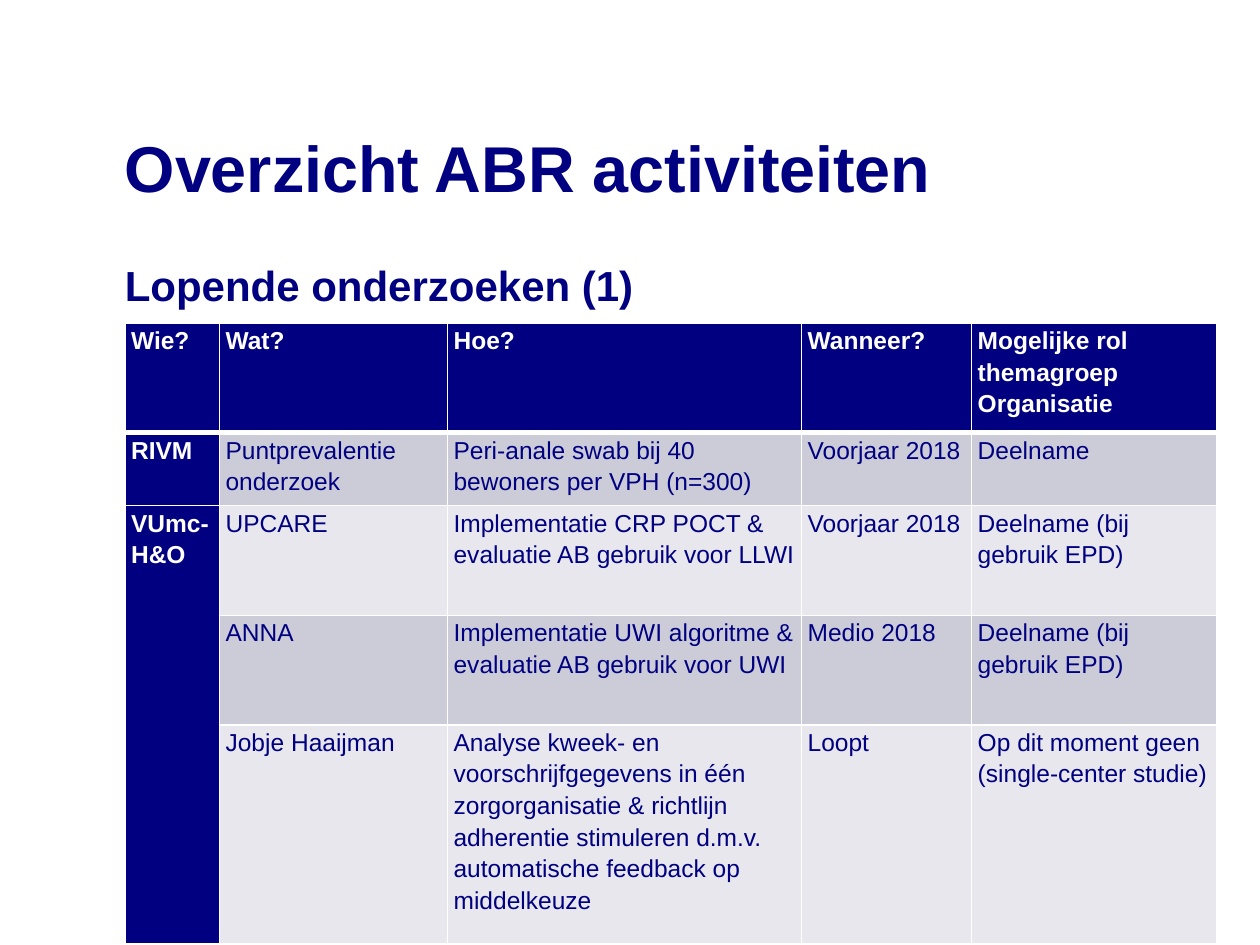
from dataclasses import dataclass

from lxml import etree
from pptx import Presentation
from pptx import util as u
from pptx.dml.color import RGBColor
from pptx.enum import text
from pptx.oxml import ns


@dataclass(frozen=True)
class Theme:
    """Colours, font and type sizes of the slide."""
    navy: str = "000080"
    white: str = "FFFFFF"
    bands: tuple = ("CCCCD8", "E7E7ED")
    font: str = "Arial"
    title: int = 37
    subtitle: int = 24
    cell: int = 14


T = Theme()
W, H = u.Inches(10), u.Inches(7.5)
COLS = (0.75, 1.81, 2.81, 1.35, 1.95)
ROWS = (0.87, 0.58, 0.87, 0.87, 1.74)
DATA = (
    ("Wie?", "Wat?", "Hoe?", "Wanneer?", "Mogelijke rol themagroep Organisatie"),
    ("RIVM", "Puntprevalentie onderzoek",
     "Peri-anale swab bij 40 bewoners per VPH (n=300)", "Voorjaar 2018", "Deelname"),
    ("VUmc-H&O", "UPCARE", "Implementatie CRP POCT & evaluatie AB gebruik voor LLWI",
     "Voorjaar 2018", "Deelname (bij gebruik EPD)"),
    ("", "ANNA", "Implementatie UWI algoritme & evaluatie AB gebruik voor UWI",
     "Medio 2018", "Deelname (bij gebruik EPD)"),
    ("", "Jobje Haaijman",
     "Analyse kweek- en voorschrijfgegevens in één zorgorganisatie & richtlijn "
     "adherentie stimuleren d.m.v. automatische feedback op middelkeuze",
     "Loopt", "Op dit moment geen (single-center studie)"),
)


def share(x, y, w, h):
    """Turn shares of the slide into a box of lengths."""
    return int(W * x), int(H * y), int(W * w), int(H * h)


def write(p, words, size, color, bold, spacing):
    """Add one styled run to a left-aligned paragraph."""
    p.alignment = text.PP_ALIGN.LEFT
    p.line_spacing = spacing
    r = p.add_run()
    r.text = words
    r.font.name, r.font.size, r.font.bold = T.font, u.Pt(size), bold
    r.font.color.rgb = RGBColor.from_string(color)


def heading(sp, box, words, size, anchor, spacing):
    """Place a bold navy heading without insets in its box."""
    sp.left, sp.top, sp.width, sp.height = box
    tf = sp.text_frame
    tf.word_wrap = True
    tf.auto_size = text.MSO_AUTO_SIZE.NONE
    tf.vertical_anchor = anchor
    tf.margin_left = tf.margin_top = tf.margin_right = tf.margin_bottom = 0
    write(tf.paragraphs[0], words, size, T.navy, True, spacing)


def borders(cell, widths):
    """Draw white cell edges with the given widths in points."""
    tcPr = cell._tc.get_or_add_tcPr()
    for side, width in widths.items():
        ln = etree.SubElement(tcPr, ns.qn(f"a:ln{side}"), w=str(u.Pt(width)))
        fill = etree.SubElement(ln, ns.qn("a:solidFill"))
        etree.SubElement(fill, ns.qn("a:srgbClr"), val=T.white)


def style_cell(cell, row, col, words):
    """Fill, edge and write one cell according to its row and column."""
    key = row == 0 or col == 0
    cell.margin_left = cell.margin_right = u.Inches(0.05)
    cell.margin_top = cell.margin_bottom = 0
    borders(cell, {"L": 1, "R": 1, "T": 3 if row == 1 else 1, "B": 3 if row == 0 else 1})
    cell.fill.solid()
    color = T.navy if key else T.bands[(row - 1) % 2]
    cell.fill.fore_color.rgb = RGBColor.from_string(color)
    if words:
        write(cell.text_frame.paragraphs[0], words, T.cell,
              T.white if key else T.navy, key, 1.15)


def study_table(s, box):
    """Lay out the studies on a weighted grid inside the box."""
    x, y, w, h = box
    tbl = s.shapes.add_table(len(ROWS), len(COLS), x, y, w, h).table
    for column, weight in zip(tbl.columns, COLS):
        column.width = int(w * weight / sum(COLS))
    for row, weight in zip(tbl.rows, ROWS):
        row.height = int(h * weight / sum(ROWS))
    for i, record in enumerate(DATA):
        for j, words in enumerate(record):
            style_cell(tbl.cell(i, j), i, j, words)
    tbl.cell(2, 0).merge(tbl.cell(4, 0))


def main():
    """Build and save the slide."""
    prs = Presentation()
    prs.slide_width, prs.slide_height = W, H
    s = prs.slides.add_slide(prs.slide_layouts[5])
    heading(s.shapes.title, share(0.099, 0.101, 0.826, 0.151),
            "Overzicht ABR activiteiten", T.title, text.MSO_ANCHOR.MIDDLE, 1.0)
    box = share(0.099, 0.269, 0.858, 0.07)
    heading(s.shapes.add_textbox(*box), box,
            "Lopende onderzoeken (1)", T.subtitle, text.MSO_ANCHOR.TOP, 1.1)
    study_table(s, share(0.099, 0.342, 0.867, 0.657))
    prs.save("out.pptx")


if __name__ == "__main__":
    main()
